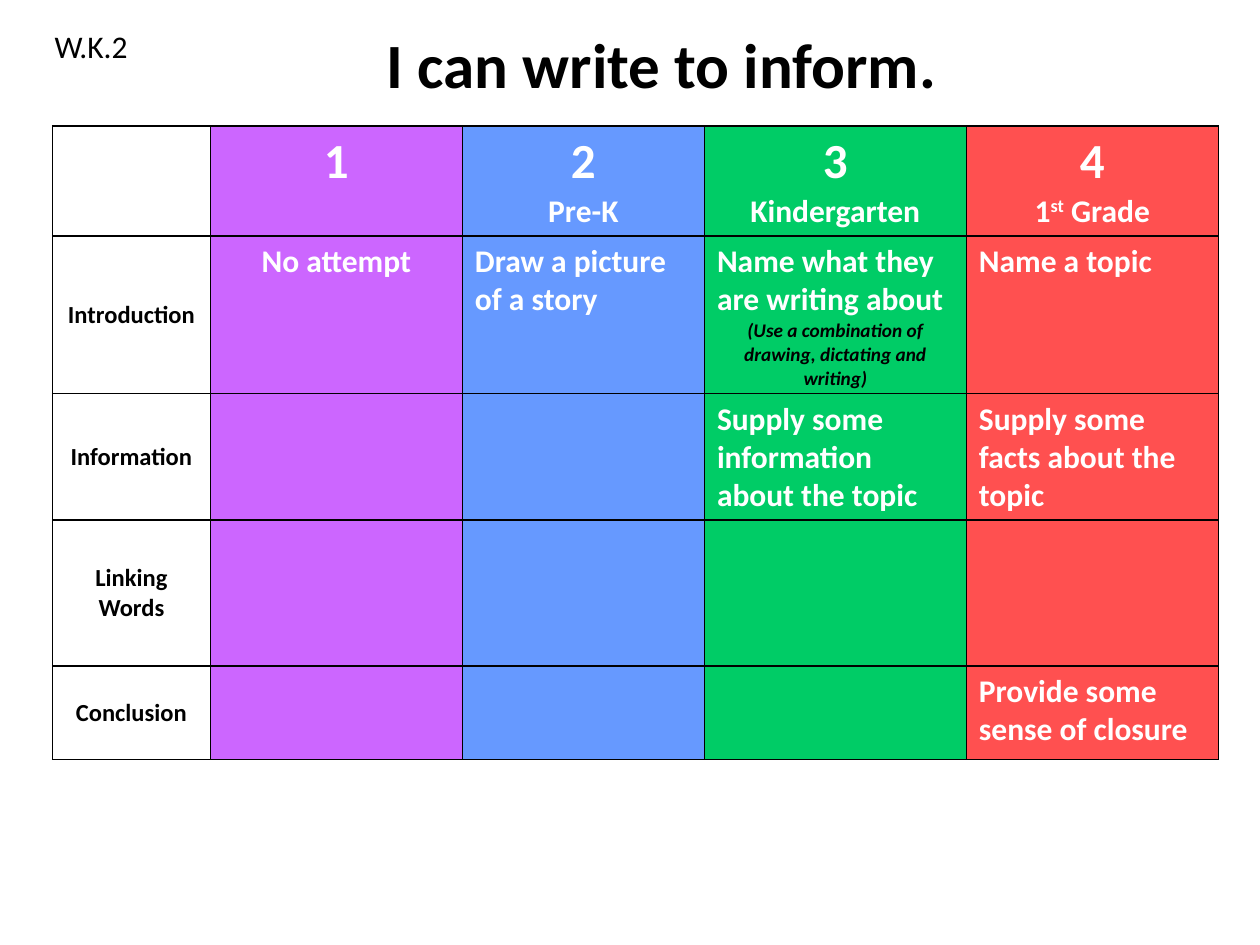
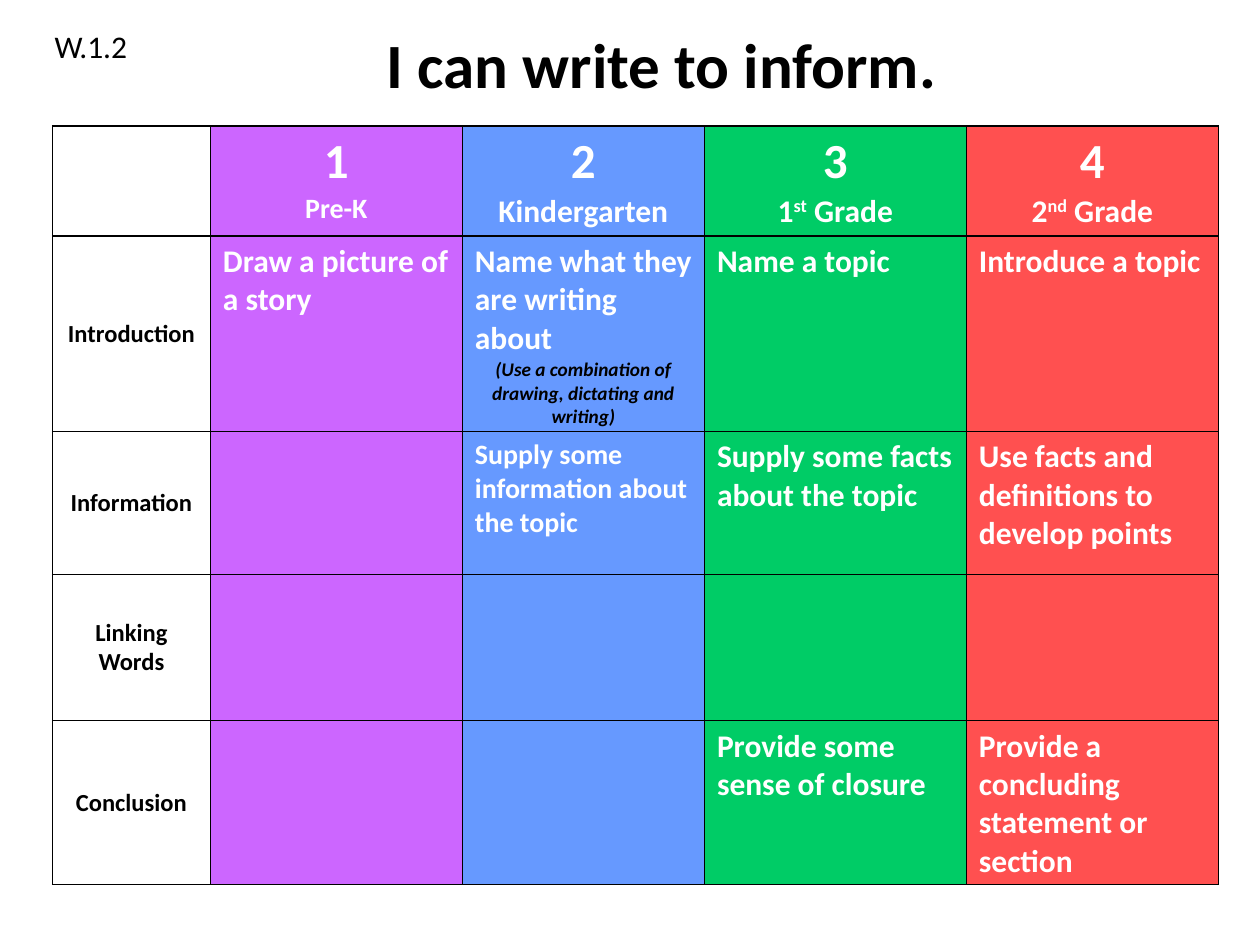
import pptx
import pptx.util
import pptx.dml.color
import pptx.enum.text
import pptx.oxml

Cm = pptx.util.Cm
Pt = pptx.util.Pt
RGBColor = pptx.dml.color.RGBColor
ALIGN = pptx.enum.text.PP_ALIGN
ANCHOR = pptx.enum.text.MSO_ANCHOR

# Shared look
FONT = "Calibri"
BLACK = RGBColor(0x00, 0x00, 0x00)
WHITE = RGBColor(0xFF, 0xFF, 0xFF)
PURPLE = RGBColor(0xCC, 0x66, 0xFF)
BLUE = RGBColor(0x66, 0x99, 0xFF)
GREEN = RGBColor(0x00, 0xCC, 0x66)
RED = RGBColor(0xFF, 0x50, 0x50)
LEVELS = [PURPLE, BLUE, GREEN, RED]
WIDTHS = [3.18, 5.08, 4.88, 5.28, 5.08]
TITLE = "I can write to inform."
STEPS = ["Introduction", "Information", "Linking Words", "Conclusion"]
HINT = "(Use a combination of drawing, dictating and writing)"
LINE = ('<a:{} xmlns:a="http://schemas.openxmlformats.org/drawingml/2006/main"'
        ' w="12700"><a:solidFill><a:srgbClr val="{}"/></a:solidFill></a:{}>')


def add_run(para, text, size, color=WHITE, bold=True, italic=False, rise=0):
    run = para.add_run()
    run.text = text
    font = run.font
    font.name, font.size = FONT, Pt(size)
    font.bold, font.italic = bold, italic
    font.color.rgb = color
    if rise:
        font._element.set("baseline", str(rise * 1000))


def add_para(frame, align):
    first = frame.paragraphs[0]
    para = frame.add_paragraph() if first.runs else first
    para.alignment = align
    return para


def add_title(slide):
    title = slide.shapes.title
    title.left, title.top = Cm(2.54), Cm(0)
    title.width, title.height = Cm(21.59), Cm(2.54)
    frame = title.text_frame
    frame.vertical_anchor = ANCHOR.MIDDLE
    add_run(add_para(frame, ALIGN.CENTER), TITLE, 36, BLACK)


def add_code(slide, code):
    box = slide.shapes.add_textbox(Cm(0.85), Cm(0.42), Cm(3.6), Cm(1.03))
    box.text_frame.word_wrap = True
    add_run(add_para(box.text_frame, ALIGN.LEFT), code, 18, BLACK, bold=False)


def style_cell(cell, color):
    if color is None:
        cell.fill.background()
    else:
        cell.fill.solid()
        cell.fill.fore_color.rgb = color
    props = cell._tc.get_or_add_tcPr()
    for spot, side in enumerate(["lnL", "lnR", "lnT", "lnB"]):
        props.insert(spot, pptx.oxml.parse_xml(LINE.format(side, BLACK, side)))


def fill_head(cell, level, grade, size=18):
    """Write the level number and its grade; a tuple is number, suffix, word."""
    frame = cell.text_frame
    add_run(add_para(frame, ALIGN.CENTER), str(level), 28)
    if not grade:
        return
    para = add_para(frame, ALIGN.CENTER)
    if isinstance(grade, tuple):
        for part, rise in zip(grade, (0, 30, 0)):
            add_run(para, part, size, rise=rise)
    else:
        add_run(para, grade, size)


def fill_goal(cell, text, size=18, align=ALIGN.LEFT, hint=False):
    add_run(add_para(cell.text_frame, align), text, size)
    if hint:
        add_run(add_para(cell.text_frame, ALIGN.CENTER), HINT, 11, BLACK,
                italic=True)


def add_rubric(slide, heights, heads, goals):
    """heads: arguments per level; goals: arguments keyed by (row, level)."""
    frame = slide.shapes.add_table(len(heights), len(WIDTHS), Cm(1.06), Cm(2.54),
                                   Cm(sum(WIDTHS)), Cm(sum(heights)))
    table = frame.table
    table.first_row = table.horz_banding = False
    for col, width in zip(table.columns, WIDTHS):
        col.width = Cm(width)
    for row, height in zip(table.rows, heights):
        row.height = Cm(height)
        for cell, color in zip(row.cells, [None] + LEVELS):
            style_cell(cell, color)
    for level, head in enumerate(heads, 1):
        fill_head(table.cell(0, level), level, **head)
    for row, step in enumerate(STEPS, 1):
        cell = table.cell(row, 0)
        cell.vertical_anchor = ANCHOR.MIDDLE
        add_run(add_para(cell.text_frame, ALIGN.CENTER), step, 14, BLACK)
    for (row, level), goal in goals.items():
        fill_goal(table.cell(row, level), **goal)


def add_page(deck, code, heights, heads, goals):
    slide = deck.slides.add_slide(deck.slide_layouts[5])
    add_title(slide)
    add_code(slide, code)
    add_rubric(slide, heights, heads, goals)


def main():
    deck = pptx.Presentation()
    deck.slide_width, deck.slide_height = Cm(25.4), Cm(19.05)

    # Goals and grades found on both slides
    draw = dict(text="Draw a picture of a story")
    name = dict(text="Name what they are writing about", hint=True)
    topic = dict(text="Name a topic")
    info = "Supply some information about the topic"
    facts = dict(text="Supply some facts about the topic")
    close = dict(text="Provide some sense of closure")
    kinder = dict(grade="Kindergarten")
    first = dict(grade=("1", "st", " Grade"))

    # Kindergarten rubric
    add_page(
        deck, "W.K.2", [2.22, 3.16, 2.54, 2.95, 1.88],
        [dict(grade=None), dict(grade="Pre-K"), kinder, first],
        {(1, 1): dict(text="No attempt", align=ALIGN.CENTER),
         (1, 2): draw, (1, 3): name, (1, 4): topic,
         (2, 3): dict(text=info), (2, 4): facts,
         (4, 4): close})

    # First grade rubric
    add_page(
        deck, "W.1.2", [2.22, 3.93, 2.88, 2.95, 3.3],
        [dict(grade="Pre-K", size=16), kinder, first,
         dict(grade=("2", "nd", " Grade"))],
        {(1, 1): draw, (1, 2): name, (1, 3): topic,
         (1, 4): dict(text="Introduce a topic"),
         (2, 2): dict(text=info, size=16), (2, 3): facts,
         (2, 4): dict(text="Use facts and definitions to develop points"),
         (4, 3): close,
         (4, 4): dict(text="Provide a concluding statement or section")})

    deck.save("out.pptx")


if __name__ == "__main__":
    main()
